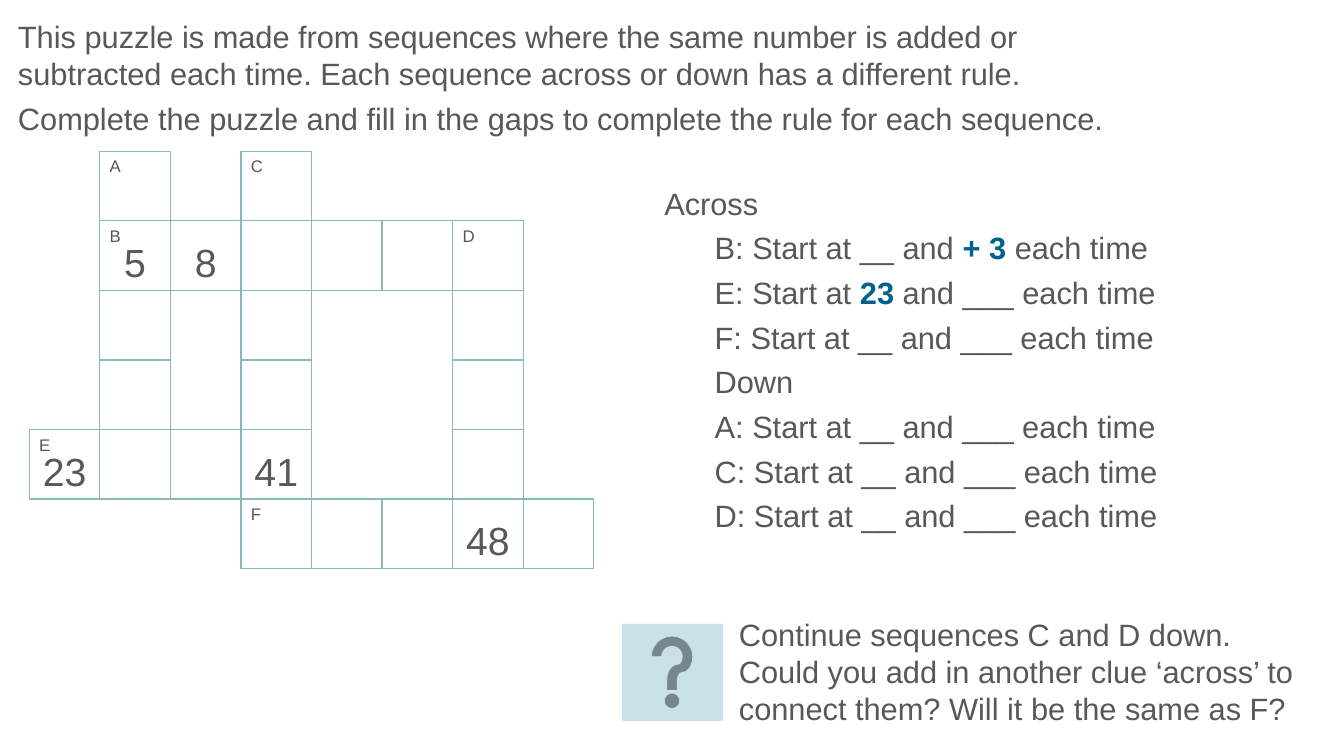
from pptx import Presentation
from pptx.dml.color import RGBColor
from pptx.enum.shapes import MSO_SHAPE
from pptx.enum.text import MSO_ANCHOR, PP_ALIGN
from pptx.util import Inches, Pt

RECT, HELP = MSO_SHAPE.RECTANGLE, MSO_SHAPE.ACTION_BUTTON_HELP
TOP, BOTTOM = MSO_ANCHOR.TOP, MSO_ANCHOR.BOTTOM
LEFT, CENTER = PP_ALIGN.LEFT, PP_ALIGN.CENTER
GREY = RGBColor(0x58, 0x58, 0x58)
BLUE = RGBColor(0x00, 0x62, 0x8C)
TEAL = RGBColor(0x8A, 0xB9, 0xB9)
PALE = RGBColor(0xC8, 0xE2, 0xE8)
WHITE = RGBColor(0xFF, 0xFF, 0xFF)

INTRO = [
    (0, ["This puzzle is made from sequences where the same number is added or "
         "subtracted each time. Each sequence across or down has a different rule."]),
    (0, ["Complete the puzzle and fill in the gaps to complete the rule for each sequence."]),
]
CLUES = [
    (0, ["Across"]),
    (1, ["B: Start at __ and ", "+ 3 ", "each time"]),
    (1, ["E: Start at ", "23", " and ___ each time"]),
    (1, ["F: Start at __ and ___ each time"]),
    (1, ["Down"]),
    (1, ["A: Start at __ and ___ each time"]),
    (1, ["C: Start at __ and ___ each time"]),
    (1, ["D: Start at __ and ___ each time"]),
]
CHALLENGE = [
    (0, ["Continue sequences C and D down. Could you add in another clue ‘across’ to "
         "connect them? Will it be the same as F?"]),
]
TEXTS = [
    ((0.08, 0.13, 11.39, 1.29), INTRO),
    ((6.49, 1.78, 5.15, 3.58), CLUES),
    ((7.23, 6.06, 5.78, 1.21), CHALLENGE),
]
GRID = [
    ".#.#....",
    ".######.",
    ".#.#..#.",
    ".#.#..#.",
    "####..#.",
    "...#####",
]
NUMBERS = {(1, 1): "5", (1, 2): "8", (4, 0): "23", (4, 3): "41", (5, 6): "48"}
LABELS = {(0, 1): "A", (1, 1): "B", (0, 3): "C", (1, 6): "D", (4, 0): "E", (5, 3): "F"}
GRID_LEFT, GRID_TOP, CELL_W, CELL_H = 0.29, 1.5, 0.7, 0.69

prs = Presentation()
prs.slide_width, prs.slide_height = Inches(13.33), Inches(7.5)
s = prs.slides.add_slide(prs.slide_layouts[6])


def add_run(p, text, size, color=GREY, bold=False):
    r = p.add_run()
    r.text = text
    r.font.color.rgb = color
    for name, value in {"name": "Arial", "size": Pt(size), "bold": bold}.items():
        setattr(r.font, name, value)


def add_box(shapes, kind, at, fill, line, width):
    sp = shapes.add_shape(kind, *map(Inches, at))
    sp.shadow.inherit = False
    if fill is None:
        sp.fill.background()
    else:
        sp.fill.solid()
        sp.fill.fore_color.rgb = fill
    sp.line.color.rgb = line
    sp.line.width = Pt(width)
    return sp


def add_cell(shapes, row, col, text, fill, size, anchor, align):
    at = (GRID_LEFT + col * CELL_W, GRID_TOP + row * CELL_H, CELL_W, CELL_H)
    tf = add_box(shapes, RECT, at, fill, TEAL, 1).text_frame
    if text:
        tf.vertical_anchor = anchor
        tf.paragraphs[0].alignment = align
        add_run(tf.paragraphs[0], text, size)


def add_text(at, paragraphs):
    tf = s.shapes.add_textbox(*map(Inches, at)).text_frame
    tf.word_wrap = True
    for i, (level, runs) in enumerate(paragraphs):
        p = tf.add_paragraph() if i else tf.paragraphs[0]
        if i:
            p.space_before = Pt(5.5)
        if level:
            p.level = level
            pPr = p._p.get_or_add_pPr()
            pPr.set("marL", str(Inches(0.5)))
            pPr.set("indent", "0")
        for j, text in enumerate(runs):
            given = j == 1
            add_run(p, text, 22, BLUE if given else GREY, given)


puzzle = s.shapes.add_group_shape().shapes
for row, line in enumerate(GRID):
    for col, mark in enumerate(line):
        if mark == "#":
            add_cell(puzzle, row, col, NUMBERS.get((row, col)), WHITE, 28, BOTTOM, CENTER)
for (row, col), label in LABELS.items():
    add_cell(puzzle, row, col, label, None, 12, TOP, LEFT)

add_box(s.shapes, HELP, (6.17, 6.19, 0.99, 0.96), PALE, PALE, 0.5)
for at, paragraphs in TEXTS:
    add_text(at, paragraphs)

prs.save("out.pptx")
